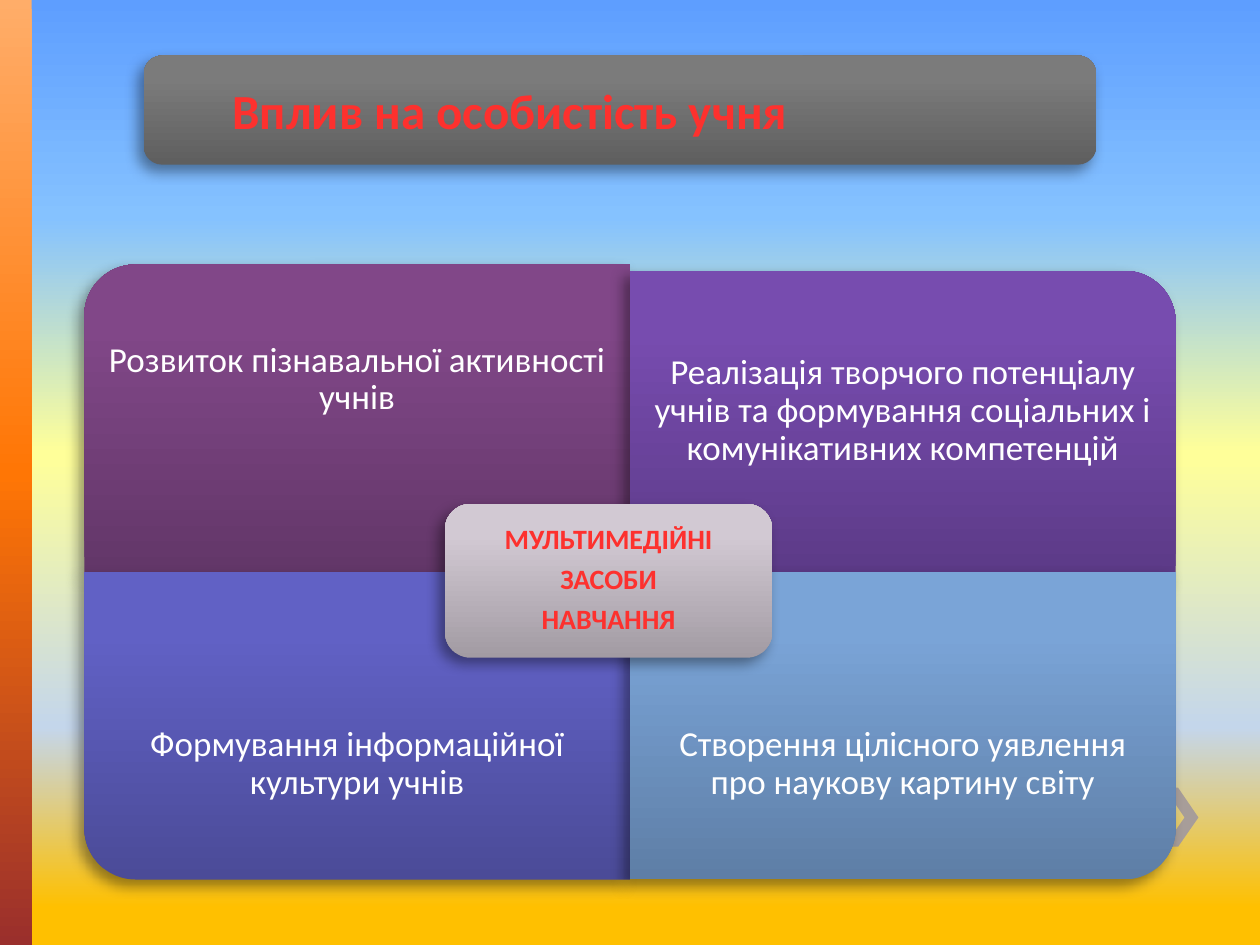
from dataclasses import dataclass

from lxml import etree
from pptx import Presentation
from pptx.dml.color import RGBColor
from pptx.enum import shapes, text
from pptx.oxml.ns import qn
from pptx.util import Cm, Pt


@dataclass(frozen=True)
class Theme:
    font: str = "Calibri"
    white: str = "FFFFFF"
    red: str = "FD312E"
    chevron: str = "A79D99"
    shadow: str = "000000"
    sky: tuple = ((0, "5E9EFF"), (23, "85C2FF"), (48, "FFFF99"), (77, "C4D6EB"), (96, "FFC000"))
    stripe: tuple = ((0, "FFAD69"), (50, "FF7605"), (100, "9A2F2C"))
    plum: tuple = ((0, "633769"), (80, "814788"), (100, "82468A"))
    violet: tuple = ((0, "5C3A87"), (80, "774CAF"), (100, "784AB2"))
    indigo: tuple = ((0, "4B4B98"), (80, "6161C5"), (100, "5F60C8"))
    blue: tuple = ((0, "5E7EA6"), (80, "7AA4D7"), (100, "79A4DA"))
    pale: tuple = ((0, "A29BA3"), (80, "D2C9D3"), (100, "D3C9D5"))
    grey: tuple = ((0, "5F5F5F"), (80, "7B7B7B"), (100, "7C7C7C"))
    title_size: int = 28
    panel_size: int = 20
    center_size: int = 16


theme = Theme()


def paint_gradient(owner, fill, stops, angle):
    """Fill with (percent, colour) stops; the angle runs clockwise and ignores rotation."""
    fill.gradient()
    gradient = next(owner.element.iter(qn("a:gradFill")))
    gradient.set("rotWithShape", "0")
    gradient.find(qn("a:lin")).set("ang", str(angle * 60000))
    stop_list = gradient.find(qn("a:gsLst"))
    for old_stop in list(stop_list):
        stop_list.remove(old_stop)
    for percent, color in stops:
        stop = etree.SubElement(stop_list, qn("a:gs"), pos=str(percent * 1000))
        etree.SubElement(stop, qn("a:srgbClr"), val=color)


def write_text(shape, lines, size, color=theme.white, bold=False,
               align=text.PP_ALIGN.CENTER, spacing=0.9, inset=0.41, left=None, top=None):
    frame = shape.text_frame
    frame.word_wrap = True
    frame.vertical_anchor = text.MSO_ANCHOR.MIDDLE
    frame.margin_left = Cm(inset if left is None else left)
    frame.margin_top = Cm(inset if top is None else top)
    frame.margin_right = frame.margin_bottom = Cm(inset)
    for index, line in enumerate(lines.split("\n")):
        paragraph = frame.add_paragraph() if index else frame.paragraphs[0]
        paragraph.alignment = align
        paragraph.line_spacing = spacing
        if index:
            paragraph.space_before = Pt(size * 0.35)
        run = paragraph.add_run()
        run.text = line
        run.font.name = theme.font
        run.font.size = Pt(size)
        run.font.bold = bold
        run.font.color.rgb = RGBColor.from_string(color)


presentation = Presentation()
presentation.slide_width, presentation.slide_height = Cm(25.4), Cm(19.05)
slide = presentation.slides.add_slide(presentation.slide_layouts[6])
paint_gradient(slide, slide.background.fill, theme.sky, 90)

# Stripe and chevron behind the diagram
stripe = slide.shapes.add_shape(
    shapes.MSO_SHAPE.RECTANGLE, 0, 0, Cm(0.64), presentation.slide_height)
stripe.shadow.inherit = False
stripe.line.fill.background()
paint_gradient(stripe, stripe.fill, theme.stripe, 90)

chevron_points = [(Cm(x), Cm(y)) for x, y in (
    (23.75, 15.88), (23.47, 15.88), (23.88, 16.48), (23.47, 17.07), (23.75, 17.07), (24.16, 16.48))]
builder = slide.shapes.build_freeform(*chevron_points[0])
builder.add_line_segments(chevron_points[1:], close=True)
chevron = builder.convert_to_shape()
chevron.shadow.inherit = False
chevron.line.fill.background()
chevron.fill.solid()
chevron.fill.fore_color.rgb = RGBColor.from_string(theme.chevron)

# Cards: four panels around a centre label, and the title bar
panel_width, panel_height = 11, 6.2
left_column, right_column = 1.7, 12.7
bottom_row = 11.53
corner = shapes.MSO_SHAPE.ROUND_1_RECTANGLE
rounded = shapes.MSO_SHAPE.ROUNDED_RECTANGLE
cards = {}
for name, preset, left, top, width, height, rotation, stops in (
    ("activity", corner, left_column, 5.33, panel_width, panel_height, 270, theme.plum),
    ("creativity", corner, right_column, 5.46, panel_width, panel_height, 0, theme.violet),
    ("culture", corner, left_column, bottom_row, panel_width, panel_height, 180, theme.indigo),
    ("world", corner, right_column, bottom_row, panel_width, panel_height, 90, theme.blue),
    ("center", rounded, 8.97, 10.16, 6.6, 3.1, 0, theme.pale),
    ("title", rounded, 2.9, 1.12, 19.2, 2.2, 0, theme.grey),
):
    if rotation % 180:
        left, top = left + (width - height) / 2, top - (width - height) / 2
        width, height = height, width
    card = slide.shapes.add_shape(preset, Cm(left), Cm(top), Cm(width), Cm(height))
    card.rotation = rotation
    card.line.fill.background()
    paint_gradient(card, card.fill, stops, 270)
    card.shadow.inherit = False
    effects = next(card.element.iter(qn("a:effectLst")))
    shadow = etree.SubElement(
        effects, qn("a:outerShdw"), blurRad=str(Pt(8)), dist=str(Pt(5)),
        dir=str(135 * 60000), rotWithShape="0")
    shadow_color = etree.SubElement(shadow, qn("a:srgbClr"), val=theme.shadow)
    etree.SubElement(shadow_color, qn("a:alpha"), val="40000")
    cards[name] = card

write_text(cards["center"], "МУЛЬТИМЕДІЙНІ\nЗАСОБИ\nНАВЧАННЯ", theme.center_size,
           color=theme.red, bold=True, inset=0.2)
write_text(cards["title"], "Вплив на особистість учня", theme.title_size, color=theme.red,
           bold=True, align=text.PP_ALIGN.LEFT, spacing=1, inset=0.13, left=1.68)

# Panel texts stay upright in their own boxes, clear of the centre label
for left, top, top_inset, caption in (
    (left_column, 5.33, 0.41, "Розвиток пізнавальної активності учнів"),
    (right_column, 5.46, 1.42,
     "Реалізація творчого потенціалу учнів та формування соціальних і комунікативних компетенцій"),
    (left_column, 13.08, 0.41, "Формування інформаційної культури учнів"),
    (right_column, 13.08, 0.41, "Створення цілісного уявлення про наукову картину світу"),
):
    caption_box = slide.shapes.add_textbox(Cm(left), Cm(top), Cm(panel_width), Cm(4.65))
    write_text(caption_box, caption, theme.panel_size, top=top_inset)

presentation.save("out.pptx")
